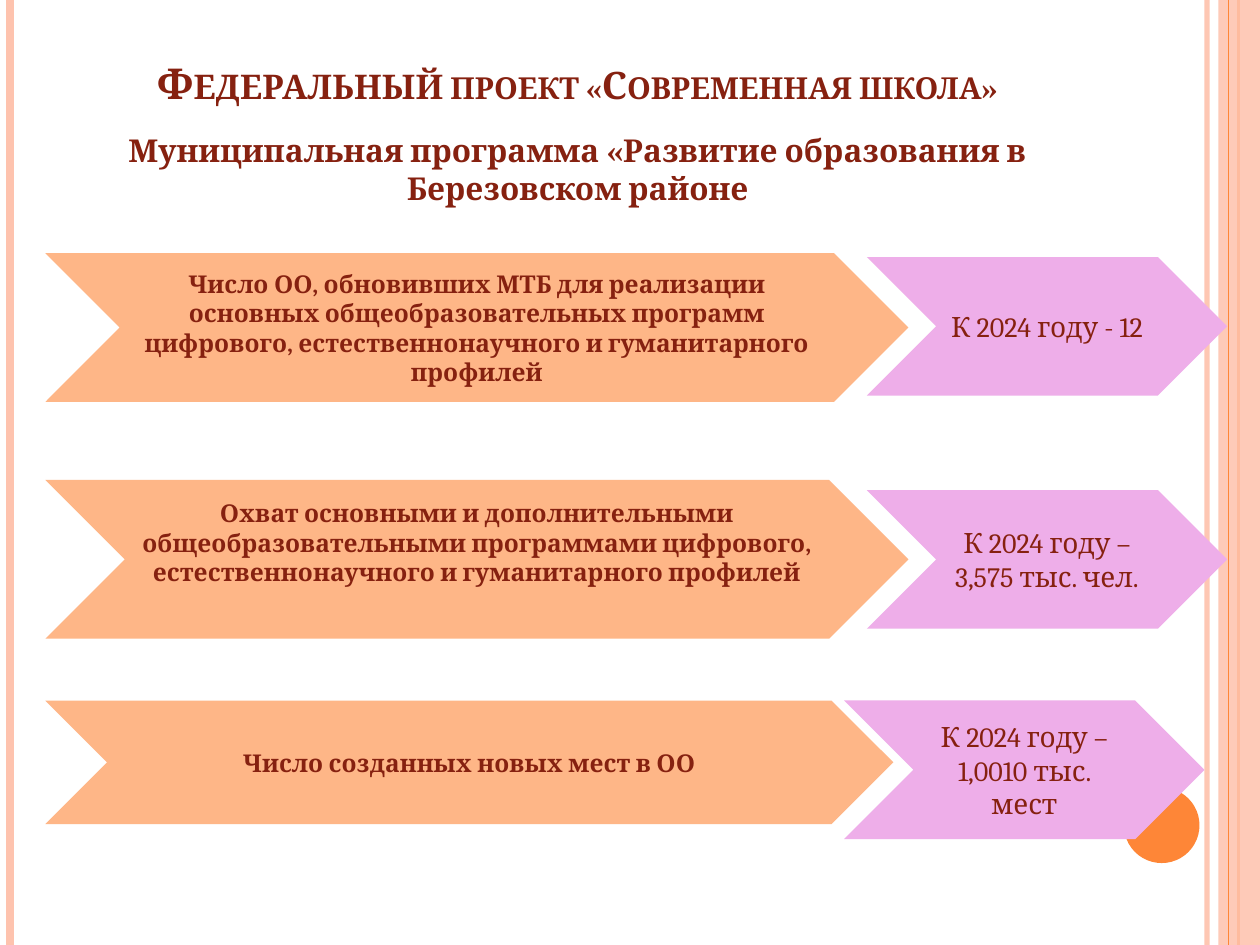
from dataclasses import dataclass

from lxml import etree
from pptx import Presentation, util as u
from pptx.dml.color import RGBColor
from pptx.enum import shapes, text
from pptx.oxml.ns import qn

WIDTH, HEIGHT = u.Inches(10), u.Inches(7.5)
COLUMNS, ROWS = 100, 75
BROWN, ORANGE, PEACH, PINK, LILAC = "862110", "FE8637", "FEB687", "FEC3AE", "EEAEE9"
FONT = "Cambria"


@dataclass
class Box:
    """A place on the grid of 100 columns by 75 rows."""
    column: float
    row: float
    columns: float
    rows: float

    def emu(self) -> tuple:
        return x(self.column), y(self.row), x(self.columns), y(self.rows)


@dataclass
class Stripe:
    column: float
    color: str
    weight: float
    opacity: int = 100


@dataclass
class Run:
    wording: str
    size: float
    bold: bool = True
    small_caps: bool = False


@dataclass
class Chevron:
    box: Box
    color: str
    label: Run
    space_below: float = 0.05


def x(columns: float) -> int:
    return int(WIDTH * columns / COLUMNS)


def y(rows: float) -> int:
    return int(HEIGHT * rows / ROWS)


def rgb(color: str) -> RGBColor:
    return RGBColor.from_string(color)


def set_opacity(properties, percent: int) -> None:
    """Add an alpha value to the first colour found in the properties."""
    if percent < 100:
        color = next(properties.iter(qn("a:srgbClr")))
        etree.SubElement(color, qn("a:alpha")).set("val", str(percent * 1000))


def draw_stripe(slide, stripe: Stripe) -> None:
    line = slide.shapes.add_connector(
        shapes.MSO_CONNECTOR.STRAIGHT, x(stripe.column), 0, x(stripe.column), HEIGHT)
    line.line.color.rgb = rgb(stripe.color)
    line.line.width = u.Pt(stripe.weight)
    properties = line._element.spPr
    set_opacity(properties, stripe.opacity)
    etree.SubElement(properties, qn("a:effectLst"))


def draw_shape(slide, preset, box: Box, color: str, opacity: int = 100):
    shape = slide.shapes.add_shape(preset, *box.emu())
    shape.shadow.inherit = False
    shape.fill.solid()
    shape.fill.fore_color.rgb = rgb(color)
    shape.line.fill.background()
    set_opacity(shape._element.spPr, opacity)
    return shape


def write(frame, runs: list[Run], anchor, space_before: float = 0) -> None:
    frame.word_wrap = True
    frame.vertical_anchor = anchor
    paragraph = frame.paragraphs[0]
    paragraph.alignment = text.PP_ALIGN.CENTER
    paragraph.space_before = u.Pt(space_before)
    for part in runs:
        run = paragraph.add_run()
        run.text = part.wording
        formats = {"name": FONT, "size": u.Pt(part.size), "bold": part.bold}
        for attribute, value in formats.items():
            setattr(run.font, attribute, value)
        run.font.color.rgb = rgb(BROWN)
        if part.small_caps:
            run._r.get_or_add_rPr().set("cap", "small")


def draw_text(slide, box: Box, runs: list[Run], anchor, space_before: float = 0) -> None:
    frame = slide.shapes.add_textbox(*box.emu()).text_frame
    write(frame, runs, anchor, space_before)


def draw_chevron(slide, chevron: Chevron) -> None:
    shape = draw_shape(slide, shapes.MSO_SHAPE.CHEVRON, chevron.box, chevron.color)
    shape.text_frame.margin_bottom = u.Inches(chevron.space_below)
    write(shape.text_frame, [chevron.label], text.MSO_ANCHOR.MIDDLE)


def indicator(row: float, columns: float, rows: float, wording: str, **options) -> Chevron:
    return Chevron(Box(3.6, row, columns, rows), PEACH, Run(wording, 14), **options)


def target(column: float, row: float, wording: str) -> Chevron:
    return Chevron(Box(column, row, 28.6, 11), LILAC, Run(wording, 16, bold=False))


STRIPES_BEHIND = [Stripe(95.8, PINK, 3, 93), Stripe(0.8, PINK, 4.5), Stripe(98.3, ORANGE, 1.5)]
STRIPE_ON_BAND = Stripe(97.5, ORANGE, 0.75)
BAND = Box(96.7, 0, 3.3, ROWS)
DISC = Box(89.2, 62.5, 6, 6)

TITLE = [
    Run("Федеральный", 24.3, small_caps=True),
    Run(" проект «Современная школа»", 21.6, small_caps=True),
]
PROGRAMME = [Run("Муниципальная программа «Развитие образования в Березовском районе", 18)]

CHEVRONS = [
    indicator(20.1, 68.5, 11.8,
              "Число ОО, обновивших МТБ для реализации основных общеобразовательных "
              "программ цифрового, естественнонаучного и гуманитарного профилей"),
    indicator(38.1, 68.5, 12.6,
              "Охват основными и дополнительными общеобразовательными программами "
              "цифрового, естественнонаучного и гуманитарного профилей", space_below=0.32),
    indicator(55.6, 67.3, 9.8, "Число созданных новых мест в ОО"),
    target(68.8, 20.4, "К 2024 году - 12"),
    target(68.8, 38.9, "К 2024 году – 3,575 тыс. чел."),
    target(67, 55.6, "К 2024 году – 1,0010 тыс. мест"),
]


def main() -> None:
    deck = Presentation()
    deck.slide_width, deck.slide_height = WIDTH, HEIGHT
    slide = deck.slides.add_slide(deck.slide_layouts[6])

    for stripe in STRIPES_BEHIND:
        draw_stripe(slide, stripe)
    draw_shape(slide, shapes.MSO_SHAPE.RECTANGLE, BAND, PINK, opacity=87)
    draw_stripe(slide, STRIPE_ON_BAND)
    draw_shape(slide, shapes.MSO_SHAPE.OVAL, DISC, ORANGE)

    draw_text(slide, Box(5, 3, 81.7, 6.1), TITLE, text.MSO_ANCHOR.BOTTOM)
    draw_text(slide, Box(5, 9.9, 81.7, 60.9), PROGRAMME, text.MSO_ANCHOR.TOP, space_before=6)
    for chevron in CHEVRONS:
        draw_chevron(slide, chevron)

    deck.save("out.pptx")


if __name__ == "__main__":
    main()
